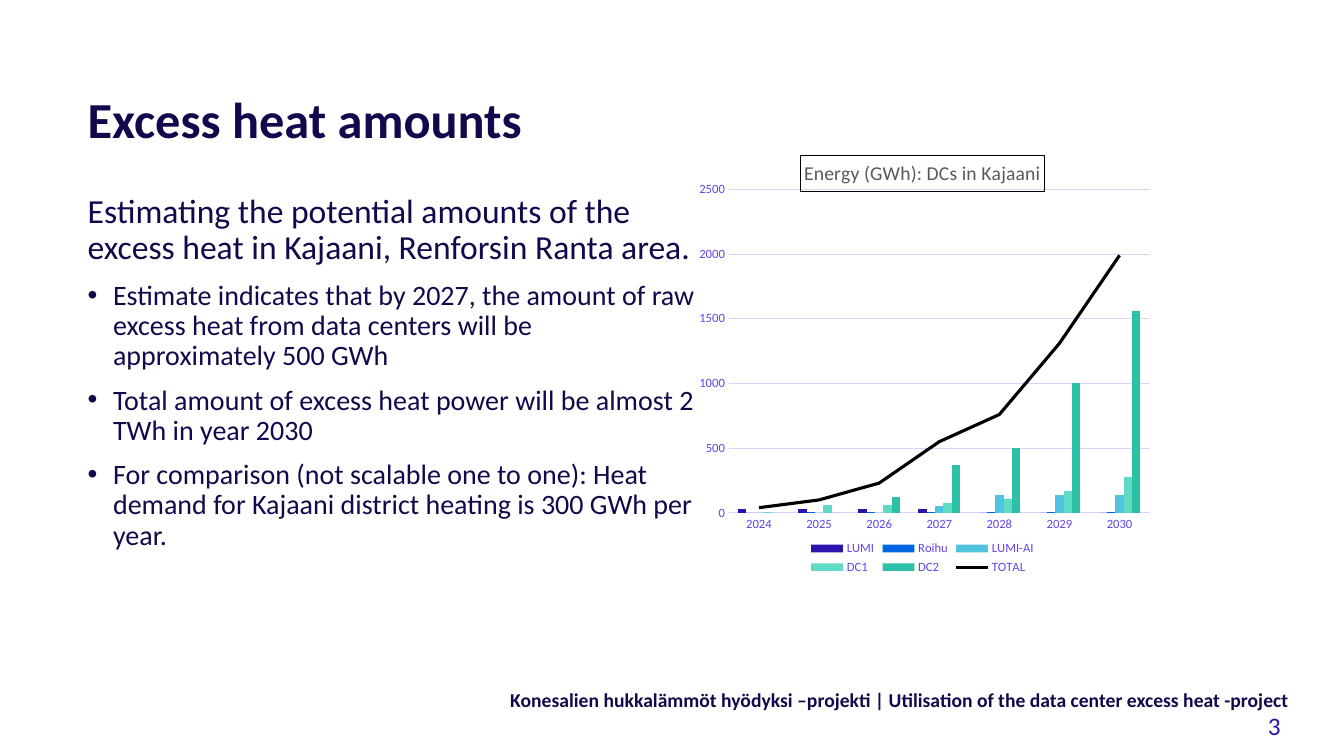
from lxml import etree
from pptx import Presentation
from pptx import util as u
from pptx.chart.data import CategoryChartData
from pptx.dml.color import RGBColor
from pptx.enum import chart as ch, text
from pptx.oxml import ns, xmlchemy

FONT = "Calibri"
COLORS = {"navy": "13084B", "indigo": "2C13AD", "violet": "6045EB", "grid": "DAD4FA",
          "grey": "595959", "black": "000000", "blue": "0066E3", "sky": "50C3DE",
          "mint": "5FDAC5", "teal": "2CC0A7"}
YEARS = [str(year) for year in range(2024, 2031)]
SERIES = [
    ("LUMI", "indigo", (30, 30, 30, 30, 0, 0, 0)),
    ("Roihu", "blue", (0, 10, 10, 10, 10, 10, 10)),
    ("LUMI-AI", "sky", (0, 0, 0, 50, 140, 140, 140)),
    ("DC1", "mint", (10, 60, 60, 80, 110, 170, 280)),
    ("DC2", "teal", (0, 0, 120, 370, 500, 1000, 1560)),
    ("TOTAL", "black", (40, 100, 230, 550, 760, 1310, 1990)),
]
INTRO = "Estimating the potential amounts of the excess heat in Kajaani, Renforsin Ranta area."
POINTS = [
    "Estimate indicates that by 2027, the amount of raw excess heat from data centers will be approximately 500 GWh",
    "Total amount of excess heat power will be almost 2 TWh in year 2030",
    "For comparison (not scalable one to one): Heat demand for Kajaani district heating is 300 GWh per year.",
]
FOOT = "Konesalien hukkalämmöt hyödyksi –projekti | Utilisation of the data center excess heat -project"


def color(name):
    """Return the named colour."""
    return RGBColor.from_string(COLORS[name])


def style(font, size, name, bold=False):
    """Set face, size, colour and weight of a font."""
    font.name, font.size, font.bold = FONT, u.Pt(size), bold
    font.color.rgb = color(name)


def stroke(line, name, width):
    """Set colour and width of a line."""
    line.color.rgb, line.width = color(name), u.Pt(width)


def add_text(slide, box, lines, size, name="navy", bold=False):
    """Add a wrapped text box and return its frame."""
    frame = slide.shapes.add_textbox(*map(u.Cm, box)).text_frame
    frame.word_wrap = True
    frame.text = "\n".join(lines)
    for para in frame.paragraphs:
        for run in para.runs:
            style(run.font, size, name, bold)
    return frame


def add_title(slide, box):
    """Place the heading at the bottom of its box."""
    frame = add_text(slide, box, ["Excess heat amounts"], 36, bold=True)
    frame.vertical_anchor = text.MSO_ANCHOR.BOTTOM
    frame.paragraphs[0].line_spacing = 0.9


def add_body(slide, box):
    """Place the intro and its bullet points."""
    frame = add_text(slide, box, [INTRO, *POINTS], 20)
    intro, *points = frame.paragraphs
    intro.line_spacing = 0.9
    intro.runs[0].font.size = u.Pt(24)
    for para in points:
        para.line_spacing, para.space_before = 0.9, u.Pt(10)
        props = para._p.get_or_add_pPr()
        props.set("marL", str(u.Cm(0.64)))
        props.set("indent", str(-u.Cm(0.64)))
        etree.SubElement(props, ns.qn("a:buFont")).set("typeface", "Arial")
        etree.SubElement(props, ns.qn("a:buChar")).set("char", "•")


def add_footer(slide, box, page):
    """Place the project line and the page number."""
    frame = add_text(slide, box, [FOOT], 14, bold=True)
    frame.paragraphs[0].alignment = text.PP_ALIGN.RIGHT
    frame.auto_size = text.MSO_AUTO_SIZE.SHAPE_TO_FIT_TEXT
    left, top, width, _ = box
    frame = add_text(slide, (left + width - 1.04, top + 0.56, 3.18, 1.02), [page], 18, "indigo")
    frame.auto_size = text.MSO_AUTO_SIZE.SHAPE_TO_FIT_TEXT


def move_total(chart):
    """Turn the last column series into a line on the same axes."""
    bars = chart.plots[0]._element
    total = bars.findall(ns.qn("c:ser"))[-1]
    for flag in total.findall(ns.qn("c:invertIfNegative")):
        total.remove(flag)
    line = xmlchemy.OxmlElement("c:lineChart")
    etree.SubElement(line, ns.qn("c:grouping")).set("val", "standard")
    etree.SubElement(line, ns.qn("c:varyColors")).set("val", "0")
    line.append(total)
    etree.SubElement(line, ns.qn("c:marker")).set("val", "1")
    for axis in bars.findall(ns.qn("c:axId")):
        etree.SubElement(line, ns.qn("c:axId")).set("val", axis.get("val"))
    bars.addnext(line)


def set_area(chart, area):
    """Fix the inner plot area as fractions of the chart."""
    plot = chart.plots[0]._element.getparent()
    for old in plot.findall(ns.qn("c:layout")):
        plot.remove(old)
    layout = xmlchemy.OxmlElement("c:layout")
    plot.insert(0, layout)
    manual = etree.SubElement(layout, ns.qn("c:manualLayout"))
    marks = [("layoutTarget", "inner"), ("xMode", "edge"), ("yMode", "edge"), *zip("xywh", area)]
    for tag, value in marks:
        etree.SubElement(manual, ns.qn(f"c:{tag}")).set("val", str(value))


def add_energy(slide, box):
    """Place the energy chart with columns and a total line."""
    data = CategoryChartData()
    data.categories = YEARS
    for name, _, values in SERIES:
        data.add_series(name, values)
    kind = ch.XL_CHART_TYPE.COLUMN_CLUSTERED
    chart = slide.shapes.add_chart(kind, *map(u.Cm, box), data).chart
    style(chart.font, 10, "indigo")

    chart.has_title = True
    title = chart.chart_title
    title.text_frame.text = "Energy (GWh): DCs in Kajaani"
    style(title.text_frame.paragraphs[0].runs[0].font, 14, "grey")
    stroke(title.format.line, "black", 0.75)

    chart.has_legend = True
    chart.legend.position = ch.XL_LEGEND_POSITION.BOTTOM
    chart.legend.include_in_layout = False
    style(chart.legend.font, 9, "violet")

    for axis in (chart.category_axis, chart.value_axis):
        axis.major_tick_mark = axis.minor_tick_mark = ch.XL_TICK_MARK.NONE
        style(axis.tick_labels.font, 9, "violet")
    stroke(chart.category_axis.format.line, "grid", 0.75)
    scale = chart.value_axis
    scale.minimum_scale, scale.maximum_scale, scale.major_unit = 0, 2500, 500
    scale.format.line.fill.background()
    stroke(scale.major_gridlines.format.line, "grid", 0.75)

    move_total(chart)
    set_area(chart, (0.1, 0.11, 0.87, 0.74))
    bars, line = chart.plots
    bars.gap_width, bars.overlap, bars.vary_by_categories = 219, 0, False
    for item, (_, name, _) in zip(bars.series, SERIES):
        item.format.fill.solid()
        item.format.fill.fore_color.rgb = color(name)
    total = line.series[0]
    total.smooth = False
    total.marker.style = ch.XL_MARKER_STYLE.NONE
    stroke(total.format.line, SERIES[-1][1], 2.25)


def main():
    """Build and save the slide."""
    deck = Presentation()
    deck.slide_width, deck.slide_height = u.Cm(33.87), u.Cm(19.05)
    slide = deck.slides.add_slide(deck.slide_layouts[6])
    add_footer(slide, (11.89, 17.22, 20.85, 0.86), "3")
    add_body(slide, (1.96, 4.78, 15.8, 10.62))
    add_title(slide, (1.96, 1.4, 28.65, 2.49))
    add_energy(slide, (17.15, 3.56, 12.19, 11.02))
    deck.save("out.pptx")


if __name__ == "__main__":
    main()
